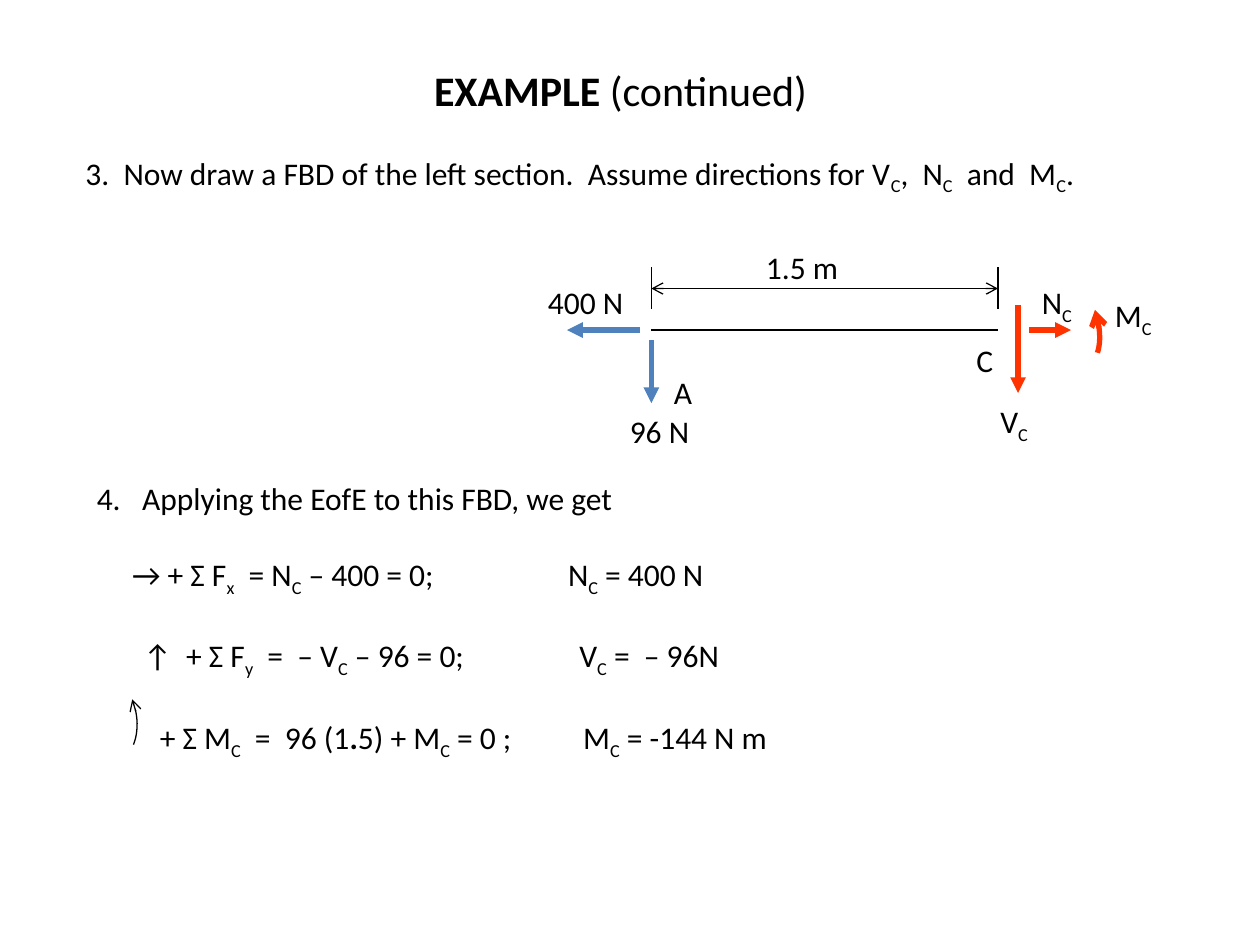
from pptx import Presentation
from pptx.dml.color import RGBColor
from pptx.enum.shapes import MSO_CONNECTOR as Link
from pptx.enum.text import MSO_ANCHOR as Anchor, PP_ALIGN as Align
from pptx.oxml.ns import qn
from pptx.util import Inches, Pt
from lxml.etree import SubElement as Sub

BLACK = RGBColor(0x00, 0x00, 0x00)
BLUE = RGBColor(0x4F, 0x81, 0xBD)
RED = RGBColor(0xFF, 0x33, 0x00)

deck = Presentation()
deck.slide_width, deck.slide_height = Inches(10), Inches(7.5)
slide = deck.slides.add_slide(deck.slide_layouts[5])
shapes = slide.shapes


def write(words, box, size=18, wrap=False, align=Align.LEFT, gap=0, tabs=(), shape=None):
    """Marks: _ lowers the next letter, ** turns bold on and off."""
    spot = [Inches(n) for n in box]
    shape = shape or shapes.add_textbox(*spot)
    shape.left, shape.top, shape.width, shape.height = spot
    frame = shape.text_frame
    frame.word_wrap = wrap
    frame.vertical_anchor = Anchor.TOP
    for row, line in enumerate(words.split("\n")):
        para = frame.add_paragraph() if row else frame.paragraphs[0]
        para.alignment = align
        para.space_before = Pt(gap if row else 0)
        if tabs:
            stops = Sub(para._p.get_or_add_pPr(), qn("a:tabLst"))
            for stop in tabs[row]:
                Sub(stops, qn("a:tab"), pos=str(Inches(stop)), algn="l")
        for turn, part in enumerate(line.split("**")):
            first, *rest = part.split("_")
            bits = [(first, False)]
            for bit in rest:
                bits += [(bit[0], True), (bit[1:], False)]
            for bit, low in bits:
                if bit:
                    run = para.add_run()
                    run.text = bit
                    font = run.font
                    font.name, font.size, font.bold = "Calibri", Pt(size), turn % 2 == 1
                    font.color.rgb = BLACK
                    if low:
                        run._r.get_or_add_rPr().set("baseline", "-25000")


def stroke(shape, color, width, head=None, tail=None):
    shape.line.color.rgb = color
    shape.line.width = Pt(width)
    for tag, kind in (("a:headEnd", head), ("a:tailEnd", tail)):
        if kind:
            Sub(shape.line._get_or_add_ln(), qn(tag), type=kind)
    if not shape._element.spPr.findall(qn("a:effectLst")):
        Sub(shape._element.spPr, qn("a:effectLst"))


write("**EXAMPLE **(continued)", (3.33, 0.46, 3.19, 0.5), size=24,
      align=Align.CENTER, shape=shapes.title)
write("3.  Now draw a FBD of the left section.  Assume directions for V_C,  N_C  and  M_C.",
      (0.58, 1.17, 8.58, 1), wrap=True)
write("4.\tApplying the EofE to this FBD, we get\n"
      "\t→ + Σ F_x  = N_C – 400 = 0;\tN_C = 400 N\n"
      "\t↑  + Σ F_y  =  – V_C – 96 = 0;\tV_C =  – 96N\n"
      "\t+ Σ M_C  =  96 (1**.**5) + M_C = 0 ;\tM_C = -144 N m",
      (0.67, 3.75, 7.93, 2.9), wrap=True, gap=22,
      tabs=((0.36,), (0.28, 3.74), (0.37, 3.83), (0.5, 3.86)))

for words, left, top, width, wrap in (
        ("96 N", 4.9, 3.22, 0.85, True),
        ("V_C", 7.84, 3.14, 0.49, False),
        ("M_C", 8.75, 2.3, 0.53, False),
        ("N_C", 8.17, 2.2, 0.49, False),
        ("1.5 m", 5.98, 1.92, 1.18, True),
        ("A", 5.25, 2.91, 0.38, False),
        ("400 N", 4.25, 2.2, 0.82, False),
        ("C", 7.65, 2.66, 0.52, True)):
    write(words, (left, top, width, 0.4), wrap=wrap)

start, end, beam = 5.17, 7.92, 2.62
for ends, color, width, head, tail in (
        ((start, beam, end, beam), BLACK, 0.75, None, None),
        ((start, 2.7, start, 3.2), BLUE, 3, None, "triangle"),
        ((5.08, beam, 4.5, beam), BLUE, 3, None, "triangle"),
        ((8.08, 2.42, 8.08, 3.12), RED, 3, None, "triangle"),
        ((8.17, beam, 8.5, beam), RED, 3, None, "triangle"),
        ((start, 2.12, start, 2.45), BLACK, 0.75, None, None),
        ((end, 2.12, end, 2.45), BLACK, 0.75, None, None),
        ((start, 2.29, end, 2.29), BLACK, 0.75, "arrow", "arrow")):
    link = shapes.add_connector(Link.STRAIGHT, *[Inches(n) for n in ends])
    stroke(link, color, width, head, tail)

STEPS = 12
for knots, color, width in (
        (((1.06, 5.91), (1.1, 5.81), (1.1, 5.68), (1.05, 5.55)), BLACK, 0.75),
        (((8.71, 2.8), (8.74, 2.71), (8.73, 2.58), (8.69, 2.46)), RED, 3)):
    dots = []
    for step in range(STEPS + 1):
        t = step / STEPS
        parts = ((1 - t) ** 3, 3 * t * (1 - t) ** 2, 3 * t ** 2 * (1 - t), t ** 3)
        dots.append([Inches(sum(p * k[axis] for p, k in zip(parts, knots)))
                     for axis in (0, 1)])
    pen = shapes.build_freeform(*dots[0])
    pen.add_line_segments(dots[1:], close=False)
    arc = pen.convert_to_shape()
    arc.shadow.inherit = False
    arc.fill.background()
    stroke(arc, color, width, tail="arrow")

deck.save("out.pptx")
